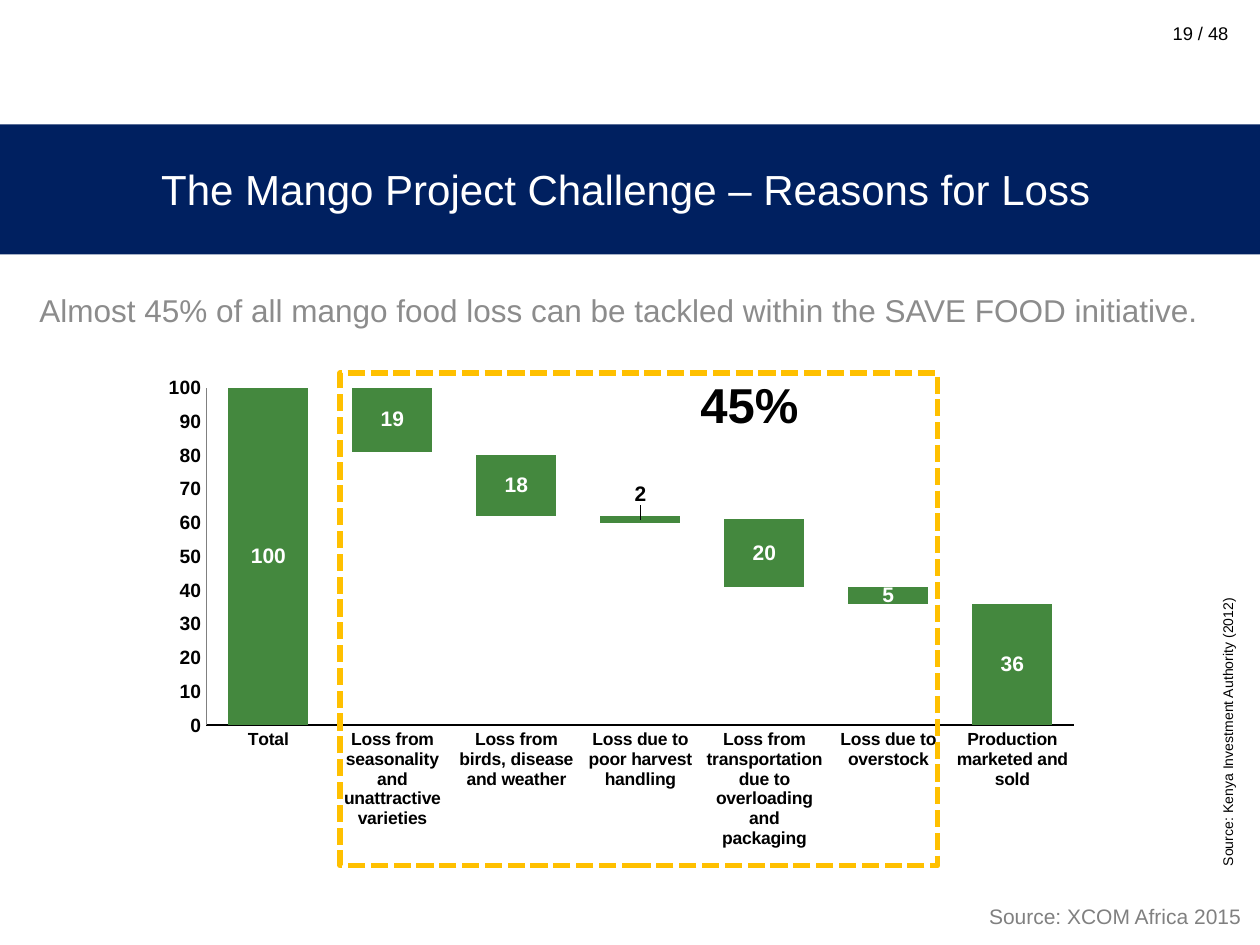
from lxml.etree import SubElement
from pptx import Presentation
from pptx.chart.data import CategoryChartData
from pptx.dml.color import RGBColor
from pptx.enum.chart import XL_CHART_TYPE, XL_TICK_MARK
from pptx.enum.dml import MSO_LINE
from pptx.enum.shapes import MSO_SHAPE
from pptx.enum.text import MSO_ANCHOR, MSO_AUTO_SIZE, PP_ALIGN
from pptx.oxml import parse_xml
from pptx.oxml.ns import nsdecls, qn
from pptx.util import Cm, Pt

NAVY = RGBColor(0x00, 0x20, 0x60)
GREEN = RGBColor(0x44, 0x88, 0x3E)
GOLD = RGBColor(0xFF, 0xC0, 0x00)
GRAY = RGBColor(0x8C, 0x8C, 0x8C)
MID = RGBColor(0x80, 0x80, 0x80)
BLACK = RGBColor(0, 0, 0)
WHITE = RGBColor(0xFF, 0xFF, 0xFF)
FONT = "Arial"

# Content: places are left, top, width, height in cm
TITLE = ("The Mango Project Challenge – Reasons for Loss",
         (0.51, 3.15, 24.21, 1.3), 24, WHITE)
BODY = ("Almost 45% of all mango food loss can be tackled within "
        "the SAVE FOOD initiative.", (0.48, 5.74, 23.98, 1.19), 18, GRAY)
NOTES = [
    # text, place, size, colour, bold, turn
    ("19 / 48", (23.39, 0.33, 2.01, 0.74), 10.5, BLACK, False, 0),
    ("Source: Kenya Investment Authority (2012)",
     (20.96, 13.28, 7.92, 0.94), 8, BLACK, False, 270),
    ("45%", (13.87, 7.42, 3.38, 1.45), 28, BLACK, True, 0),
    ("Source: XCOM Africa 2015",
     (19.69, 18.08, 7.67, 0.76), 12, MID, False, 0),
]
BAND = (0, 2.51, 25.4, 2.62)
FRAME = (6.86, 7.52, 12.04, 9.93)
CHART = (3.02, 7.42, 19.02, 9.86)
PLOT = {"x": 0.06, "y": 0.04, "w": 0.92, "h": 0.69}
STEPS = [
    # label, hidden base, shown value
    ("Total", 0, 100),
    ("Loss from seasonality and unattractive varieties", 81, 19),
    ("Loss from birds, disease and weather", 62, 18),
    ("Loss due to poor harvest handling", 60, 2),
    ("Loss from transportation due to overloading and packaging", 41, 20),
    ("Loss due to overstock", 36, 5),
    ("Production marketed and sold", None, 36),
]
THIN = 3  # step whose label sits above its bar


def place(box):
    return [Cm(n) for n in box]


def style(font, size, color, bold=False):
    look = {"name": FONT, "size": Pt(size), "bold": bold}
    for key, val in look.items():
        setattr(font, key, val)
    font.color.rgb = color


def layout(spots):
    """Chart layout element with the given values."""
    node = parse_xml(f"<c:layout {nsdecls('c')}><c:manualLayout/></c:layout>")
    for tag, val in spots.items():
        SubElement(node[0], qn("c:" + tag)).set("val", str(val))
    return node


def fill_in(shape, text, box, size, color):
    """Move and format a template placeholder."""
    for key, val in zip(("left", "top", "width", "height"), place(box)):
        setattr(shape, key, val)
    frame = shape.text_frame
    frame.text = text
    frame.auto_size = MSO_AUTO_SIZE.NONE
    line = frame.paragraphs[0]
    line.alignment = PP_ALIGN.CENTER
    line.space_before = Pt(0)
    style(line.runs[0].font, size, color)
    return line


def add_rect(slide, box):
    shape = slide.shapes.add_shape(MSO_SHAPE.RECTANGLE, *place(box))
    shape.shadow.inherit = False
    return shape


def add_note(slide, text, box, size, color, bold, turn):
    shape = slide.shapes.add_textbox(*place(box))
    shape.rotation = turn
    shape.text_frame.word_wrap = True
    shape.text_frame.text = text
    style(shape.text_frame.paragraphs[0].runs[0].font, size, color, bold)


def add_steps(slide):
    names, bases, vals = zip(*STEPS)
    data = CategoryChartData()
    data.categories = names
    data.add_series("Series 1", bases)
    data.add_series("Series 2", vals)
    chart = slide.shapes.add_chart(
        XL_CHART_TYPE.COLUMN_STACKED, *place(CHART), data).chart
    chart.has_legend = chart.has_title = False
    style(chart.font, 18, BLACK, True)

    # Plot area and bars
    area = chart.plots[0]
    for key, val in {"gap_width": 55, "overlap": 100,
                     "vary_by_categories": False}.items():
        setattr(area, key, val)
    room = chart.element.find(".//" + qn("c:plotArea"))
    old = room.find(qn("c:layout"))
    if old is not None:
        room.remove(old)
    room.insert(0, layout({"layoutTarget": "inner", "xMode": "edge",
                           "yMode": "edge", **PLOT}))
    base, bars = area.series
    base.format.fill.background()
    base.format.line.fill.background()
    bars.format.fill.solid()
    bars.format.fill.fore_color.rgb = GREEN

    # Value labels
    tags = bars.data_labels
    tags.show_value = True
    style(tags.font, 12, WHITE, True)
    style(bars.points[THIN].data_label.font, 12, BLACK, True)
    tag = bars.data_labels._element.find(qn("c:dLbl"))
    tag.find(qn("c:idx")).addnext(layout({"x": 0, "y": -0.05}))

    # Axes
    for axis, size, color, width in (
            (chart.category_axis, 10, BLACK, 1),
            (chart.value_axis, 11, MID, 0.75)):
        axis.major_tick_mark = axis.minor_tick_mark = XL_TICK_MARK.NONE
        axis.has_major_gridlines = False
        style(axis.tick_labels.font, size, BLACK, True)
        axis.format.line.color.rgb = color
        axis.format.line.width = Pt(width)
    for key, val in {"minimum_scale": 0, "maximum_scale": 100,
                     "major_unit": 10}.items():
        setattr(chart.value_axis, key, val)


def main():
    deck = Presentation()
    deck.slide_width, deck.slide_height = Cm(25.4), Cm(19.05)
    slide = deck.slides.add_slide(deck.slide_layouts[1])

    # Band behind the title
    band = add_rect(slide, BAND)
    band.fill.solid()
    band.fill.fore_color.rgb = NAVY
    band.line.fill.background()
    slide.shapes._spTree.insert(2, band._element)

    # Title and lead line
    title, body = slide.placeholders
    fill_in(title, *TITLE)
    title.text_frame.vertical_anchor = MSO_ANCHOR.MIDDLE
    props = fill_in(body, *BODY)._p.get_or_add_pPr()
    for key in ("marL", "indent"):
        props.set(key, "0")
    SubElement(props, qn("a:buNone"))

    # Waterfall chart with its frame
    add_steps(slide)
    frame = add_rect(slide, FRAME)
    frame.fill.background()
    frame.line.color.rgb = GOLD
    frame.line.width = Pt(3.25)
    frame.line.dash_style = MSO_LINE.SQUARE_DOT

    # Page number, total and sources
    for note in NOTES:
        add_note(slide, *note)
    deck.save("out.pptx")


if __name__ == "__main__":
    main()
